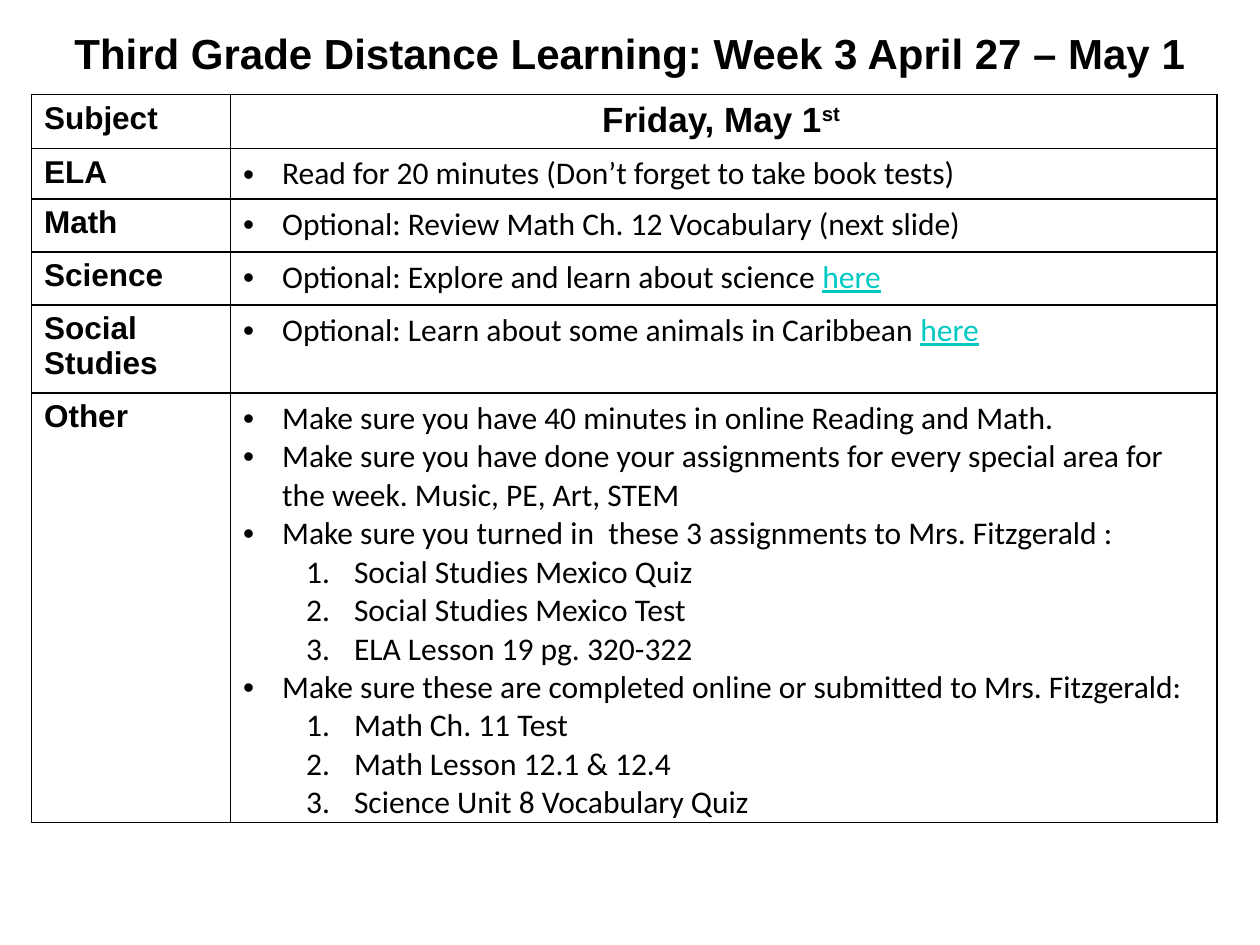
from dataclasses import dataclass

from lxml import etree
from pptx import Presentation
from pptx.dml.color import RGBColor
from pptx.enum import text
from pptx.oxml import ns
from pptx.util import Inches, Pt


@dataclass(frozen=True)
class Theme:
    ink: RGBColor = RGBColor(0, 0, 0)
    paper: RGBColor = RGBColor(255, 255, 255)
    link: RGBColor = RGBColor(0x00, 0xC8, 0xC3)
    heading: str = "Arial"
    body: str = "Calibri"
    title_size: int = 24
    day_size: int = 20
    text_size: int = 18


THEME = Theme()
LABEL = dict(name=THEME.heading, size=Pt(THEME.text_size), bold=True)
DAY = dict(LABEL, size=Pt(THEME.day_size))
TITLE = dict(LABEL, size=Pt(THEME.title_size))
TASK = dict(name=THEME.body, size=Pt(THEME.text_size), bold=False)

# Left margin, first-line indent, marker element and its attributes, by level
LIST_LEVELS = [
    (0.31, -0.31, "buChar", {"char": "•"}),
    (0.88, -0.38, "buAutoNum", {"type": "arabicPeriod"}),
]

# Each task is (level, text, link word)
SCHEDULE = [
    (["ELA"], 0.4, [(0, "Read for 20 minutes (Don’t forget to take book tests)", "")]),
    (["Math"], 0.42, [(0, "Optional: Review Math Ch. 12 Vocabulary (next slide)", "")]),
    (["Science"], 0.42, [(0, "Optional: Explore and learn about science ", "here")]),
    (["Social", "Studies"], 0.7,
     [(0, "Optional: Learn about some animals in Caribbean ", "here")]),
    (["Other"], 3.4, [
        (0, "Make sure you have 40 minutes in online Reading and Math.", ""),
        (0, "Make sure you have done your assignments for every special area for "
            "the week. Music, PE, Art, STEM", ""),
        (0, "Make sure you turned in  these 3 assignments to Mrs. Fitzgerald :", ""),
        (1, "Social Studies Mexico Quiz", ""),
        (1, "Social Studies Mexico Test", ""),
        (1, "ELA Lesson 19 pg. 320-322", ""),
        (0, "Make sure these are completed online or submitted to Mrs. Fitzgerald:", ""),
        (1, "Math Ch. 11 Test", ""),
        (1, "Math Lesson 12.1 & 12.4", ""),
        (1, "Science Unit 8 Vocabulary Quiz", ""),
    ]),
]
HEADER_HEIGHT = 0.43
COLUMN_WIDTHS = (1.58, 7.83)


def add_run(paragraph, words, style, color=THEME.ink):
    run = paragraph.add_run()
    run.text = words
    for attribute, value in style.items():
        setattr(run.font, attribute, value)
    run.font.color.rgb = color
    return run


def paragraphs(frame, count):
    """Return the frame's first paragraph followed by new ones, count in all."""
    return [frame.paragraphs[0]] + [frame.add_paragraph() for _ in range(count - 1)]


def set_list_level(paragraph, level):
    margin, indent, marker, attributes = LIST_LEVELS[level]
    paragraph.level = level
    properties = paragraph._p.get_or_add_pPr()
    properties.set("marL", str(Inches(margin)))
    properties.set("indent", str(Inches(indent)))
    etree.SubElement(properties, ns.qn("a:buFont"), typeface=THEME.heading)
    etree.SubElement(properties, ns.qn(f"a:{marker}"), attributes)


def frame_cell(cell):
    """Give the cell a plain fill and a thin line on each side."""
    cell.fill.solid()
    cell.fill.fore_color.rgb = THEME.paper
    properties = cell._tc.get_or_add_tcPr()
    for position, side in enumerate("LRTB"):
        line = etree.Element(ns.qn(f"a:ln{side}"), w=str(Pt(1)))
        fill = etree.SubElement(line, ns.qn("a:solidFill"))
        etree.SubElement(fill, ns.qn("a:srgbClr"), val=str(THEME.ink))
        properties.insert(position, line)


def write_label(cell, lines):
    for paragraph, line in zip(paragraphs(cell.text_frame, len(lines)), lines):
        add_run(paragraph, line, LABEL)


def write_day(cell):
    day = cell.text_frame.paragraphs[0]
    day.alignment = text.PP_ALIGN.CENTER
    add_run(day, "Friday, May 1", DAY)
    ordinal = add_run(day, "st ", DAY)
    ordinal._r.get_or_add_rPr().set("baseline", "30000")


def write_tasks(cell, tasks):
    cell.margin_bottom = 0
    for paragraph, (level, words, link) in zip(
            paragraphs(cell.text_frame, len(tasks)), tasks):
        set_list_level(paragraph, level)
        add_run(paragraph, words, TASK)
        if link:
            add_run(paragraph, link, dict(TASK, underline=True), THEME.link)


def add_title(slide, left, top, width, height):
    frame = slide.shapes.add_textbox(left, top, width, height).text_frame
    frame.word_wrap = True
    heading = frame.paragraphs[0]
    heading.alignment = text.PP_ALIGN.CENTER
    add_run(heading, "Third Grade Distance Learning: Week 3 April 27 – May 1", TITLE)


def add_schedule(slide, left, top):
    heights = [HEADER_HEIGHT] + [height for _, height, _ in SCHEDULE]
    schedule = slide.shapes.add_table(
        len(heights), len(COLUMN_WIDTHS), left, top,
        Inches(sum(COLUMN_WIDTHS)), Inches(sum(heights))).table
    schedule.first_row = schedule.horz_banding = False
    for column, width in zip(schedule.columns, COLUMN_WIDTHS):
        column.width = Inches(width)
    for row, height in zip(schedule.rows, heights):
        row.height = Inches(height)
    for cell in schedule.iter_cells():
        frame_cell(cell)

    write_label(schedule.cell(0, 0), ["Subject"])
    write_day(schedule.cell(0, 1))
    for row, (subject, _, tasks) in enumerate(SCHEDULE, start=1):
        write_label(schedule.cell(row, 0), subject)
        write_tasks(schedule.cell(row, 1), tasks)


def main():
    deck = Presentation()
    deck.slide_width, deck.slide_height = Inches(10), Inches(7.5)
    slide = deck.slides.add_slide(deck.slide_layouts[6])
    add_schedule(slide, Inches(0.25), Inches(0.75))
    add_title(slide, 0, Inches(0.17), deck.slide_width, Inches(0.5))
    deck.save("out.pptx")


if __name__ == "__main__":
    main()
